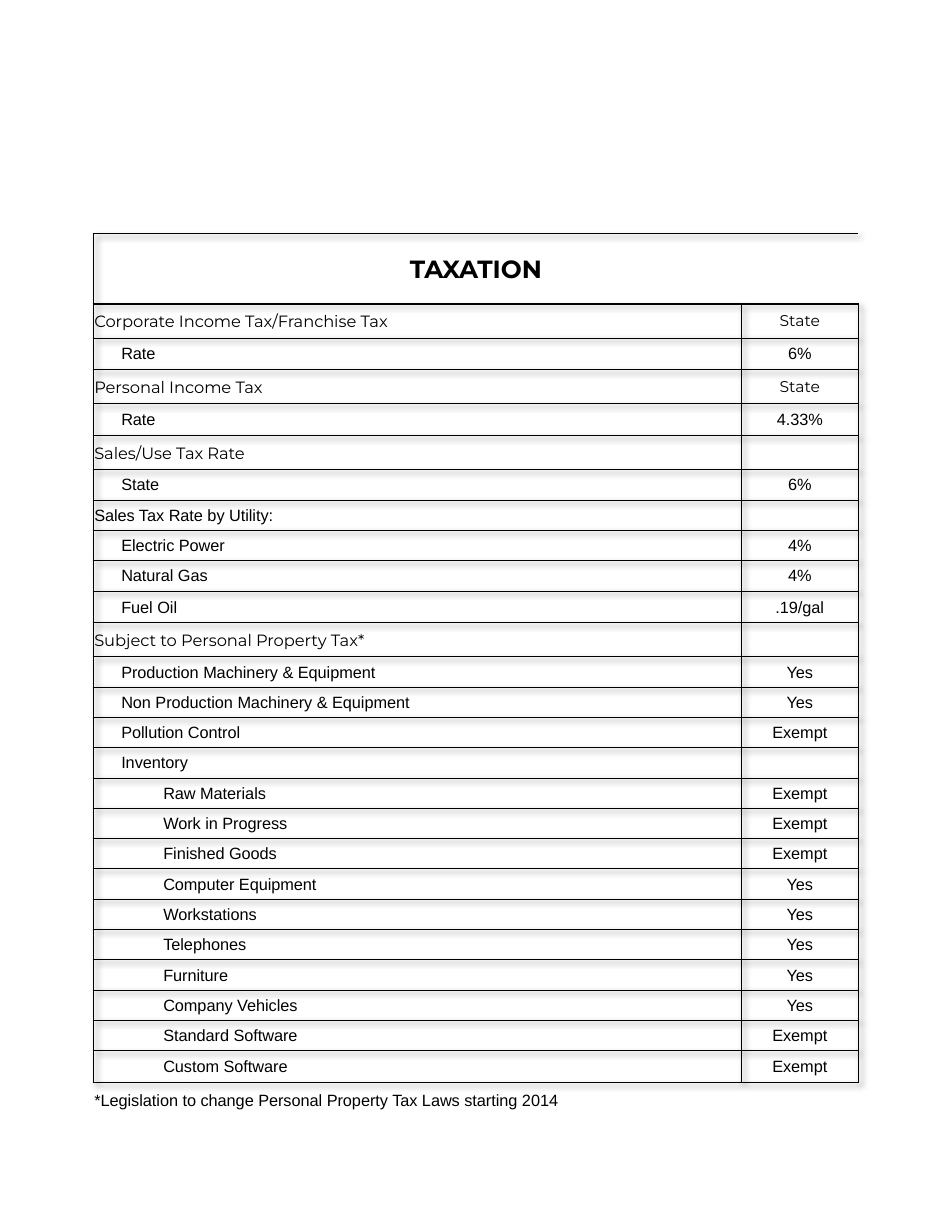
from lxml import etree
from pptx import Presentation
from pptx import util as u
from pptx.dml.color import RGBColor
from pptx.enum import text
from pptx.oxml import parse_xml
from pptx.oxml.ns import nsdecls, qn

PX = 914400 // 336  # 336 px to the inch
BLACK = RGBColor(0, 0, 0)
HEAD, BODY = "Montserrat", "Arial"
TALL = {"title": 211, "head": 102, "row": 91, "end": 96, "note": 108}
DENT = [3, 84, 210]
THIN, THICK = 0.5, 1

# kind, indent level, label, value
ROWS = [
    ("title", 0, "TAXATION", ""),
    ("head", 0, "Corporate Income Tax/Franchise Tax", "State"),
    ("end", 1, "Rate", "6%"),
    ("head", 0, "Personal Income Tax", "State"),
    ("end", 1, "Rate", "4.33%"),
    ("head", 0, "Sales/Use Tax Rate", ""),
    ("row", 1, "State", "6%"),
    ("row", 0, "Sales Tax Rate by Utility:", ""),
    ("row", 1, "Electric Power", "4%"),
    ("row", 1, "Natural Gas", "4%"),
    ("end", 1, "Fuel Oil", ".19/gal"),
    ("head", 0, "Subject to Personal Property Tax*", ""),
    ("row", 1, "Production Machinery & Equipment", "Yes"),
    ("row", 1, "Non Production Machinery & Equipment", "Yes"),
    ("row", 1, "Pollution Control", "Exempt"),
    ("row", 1, "Inventory", ""),
    ("row", 2, "Raw Materials", "Exempt"),
    ("row", 2, "Work in Progress", "Exempt"),
    ("row", 2, "Finished Goods", "Exempt"),
    ("row", 2, "Computer Equipment", "Yes"),
    ("row", 2, "Workstations", "Yes"),
    ("row", 2, "Telephones", "Yes"),
    ("row", 2, "Furniture", "Yes"),
    ("row", 2, "Company Vehicles", "Yes"),
    ("row", 2, "Standard Software", "Exempt"),
    ("end", 2, "Custom Software", "Exempt"),
    ("note", 0, "*Legislation to change Personal Property Tax Laws starting 2014", ""),
]


def write(cell, words, face, size, dent, mid):
    cell.vertical_anchor = text.MSO_ANCHOR.MIDDLE
    cell.margin_left = dent * PX
    cell.margin_right = cell.margin_top = 3 * PX
    cell.margin_bottom = 0
    para = cell.text_frame.paragraphs[0]
    para.alignment = text.PP_ALIGN.CENTER if mid else text.PP_ALIGN.LEFT
    if not words:
        # An empty cell needs a small end mark, or its row would grow
        etree.SubElement(para._p, qn("a:endParaRPr"), sz=str(int(size * 100)))
        return
    run = para.add_run()
    run.text = words
    run.font.name = face
    run.font.size = u.Pt(size)
    run.font.bold = size == 16
    run.font.color.rgb = BLACK


def edge(cell, left, right, top, bottom):
    """Draw the four borders, in points; 0 means none."""
    props = cell._tc.get_or_add_tcPr()
    for side, wide in zip("LRTB", (left, right, top, bottom)):
        fill = f'<a:solidFill><a:srgbClr val="{BLACK}"/></a:solidFill>' if wide else "<a:noFill/>"
        props.append(parse_xml(
            f'<a:ln{side} {nsdecls("a")} w="{u.Pt(wide)}">{fill}</a:ln{side}>'))
    cell.fill.background()


deck = Presentation()
deck.slide_width, deck.slide_height = u.Inches(8.5), u.Inches(11)
slide = deck.slides.add_slide(deck.slide_layouts[6])

high = sum(TALL[row[0]] for row in ROWS)
frame = slide.shapes.add_table(len(ROWS), 2, 280 * PX, 701 * PX, 2296 * PX, high * PX)
table = frame.table
table.first_row = table.horz_banding = False
table.columns[0].width, table.columns[1].width = 1944 * PX, 352 * PX

# Plain table style, with a soft shadow under the grid
props = table._tbl.tblPr
props.find(qn("a:tableStyleId")).text = "{2D5ABB26-0587-4C30-8999-92F81FD0307C}"
props.insert(0, parse_xml(
    f'<a:effectLst {nsdecls("a")}><a:outerShdw blurRad="50800" dist="38100" dir="2700000" '
    'algn="tl" rotWithShape="0"><a:srgbClr val="000000"><a:alpha val="40000"/></a:srgbClr>'
    '</a:outerShdw></a:effectLst>'))

for i, (kind, level, label, value) in enumerate(ROWS):
    table.rows[i].height = TALL[kind] * PX
    name, rate = table.cell(i, 0), table.cell(i, 1)
    wide = kind in ("title", "note")
    if wide:
        name.merge(rate)
    face = HEAD if kind in ("title", "head") else BODY
    write(name, label, face, 16 if kind == "title" else 10.5, DENT[level], kind == "title")
    write(rate, value, face, 10 if kind == "head" else 10.5, DENT[0], True)

    top = THICK if kind in ("title", "head", "note") else THIN
    low = THICK if kind in ("title", "end") else THIN
    if kind == "note":
        edge(name, 0, 0, top, 0)
        edge(rate, 0, 0, top, 0)
    else:
        mid = 0 if wide else THIN
        edge(name, THICK, mid, top, low)
        edge(rate, mid, THICK if wide else THIN, top, low)

deck.save("out.pptx")
